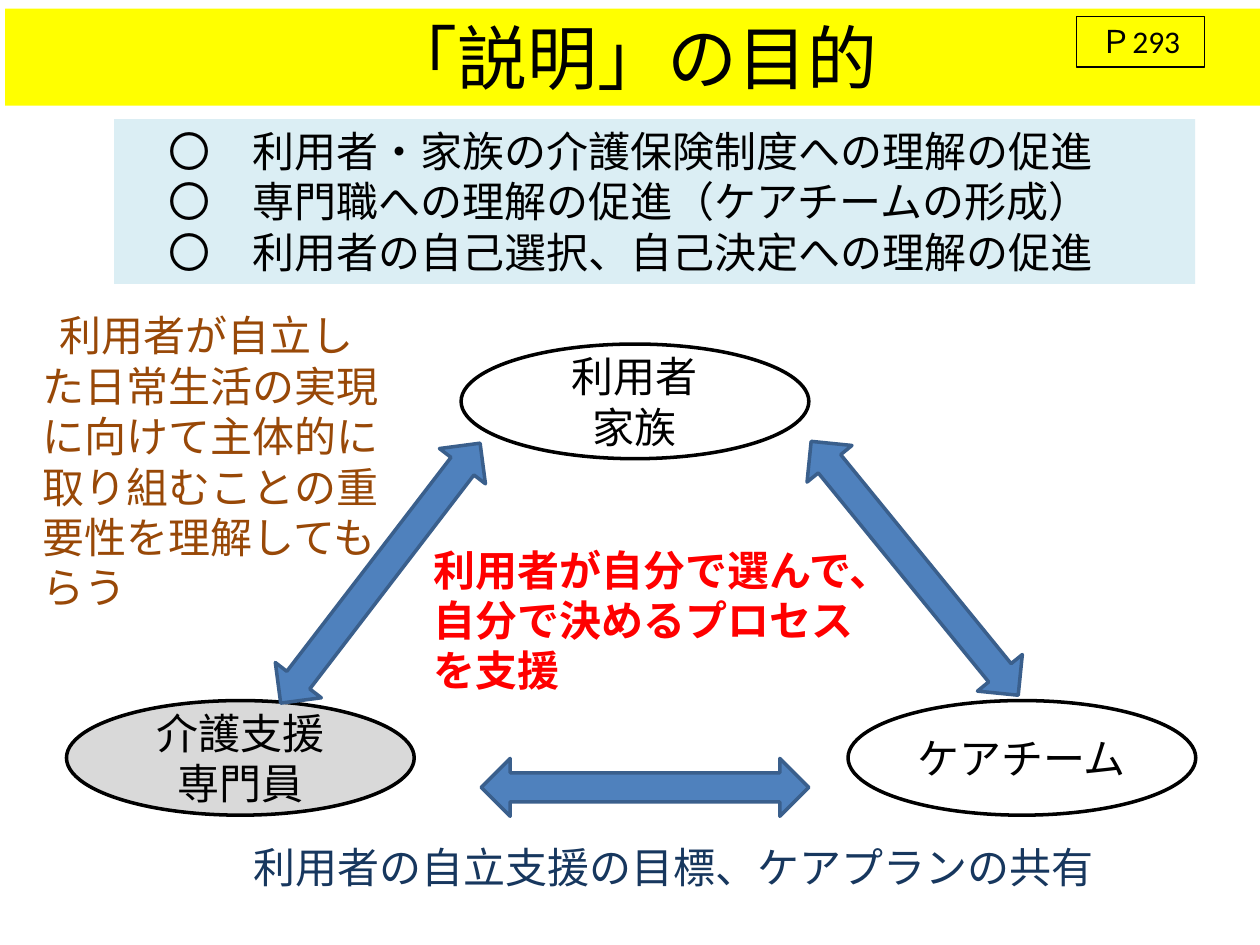
from dataclasses import dataclass

import pptx
import pptx.dml.color
import pptx.enum.shapes
import pptx.enum.text
import pptx.util

Pt = pptx.util.Pt
Shape = pptx.enum.shapes.MSO_SHAPE
Align = pptx.enum.text.PP_ALIGN
Anchor = pptx.enum.text.MSO_ANCHOR


@dataclass(frozen=True)
class Theme:
    font: str = "Calibri"
    title_size: float = 40
    body_size: float = 24
    page_size: float = 18
    black: str = "000000"
    yellow: str = "FFFF00"
    pale_blue: str = "DBEEF4"
    grey: str = "D9D9D9"
    arrow: str = "4F81BD"
    arrow_edge: str = "3A5F8C"
    brown: str = "984807"
    navy: str = "17375E"
    red: str = "FF0000"


THEME = Theme()
ELLIPSE_SIZE = (198.7, 65.5)
ARROW_SIZE = (187.2, 33.1)


def rgb(value):
    return pptx.dml.color.RGBColor.from_string(value)


def write_text(box, lines, size=THEME.body_size, color=THEME.black,
               align=Align.LEFT, anchor=Anchor.TOP, bold=False):
    frame = box.text_frame
    frame.word_wrap = True
    frame.vertical_anchor = anchor
    frame.text = "\n".join(lines)
    for para in frame.paragraphs:
        para.alignment = align
        para.font.name = THEME.font
        para.font.size = Pt(size)
        para.font.bold = bold
        para.font.color.rgb = rgb(color)


def add_figure(shapes, kind, bounds, fill=None, line=None, width=2):
    figure = shapes.add_shape(kind, *map(Pt, bounds))
    figure.shadow.inherit = False
    if fill:
        figure.fill.solid()
        figure.fill.fore_color.rgb = rgb(fill)
    else:
        figure.fill.background()
    if line:
        figure.line.color.rgb = rgb(line)
        figure.line.width = Pt(width)
    else:
        figure.line.fill.background()
    return figure


def add_actor(shapes, left, top, lines, fill=None):
    actor = add_figure(shapes, Shape.OVAL, (left, top, *ELLIPSE_SIZE), fill, THEME.black)
    write_text(actor, lines, align=Align.CENTER, anchor=Anchor.MIDDLE)


def add_double_arrow(shapes, left, top, rotation=0):
    arrow = add_figure(shapes, Shape.LEFT_RIGHT_ARROW, (left, top, *ARROW_SIZE),
                       THEME.arrow, THEME.arrow_edge)
    arrow.rotation = rotation


def add_note(shapes, bounds, text, color, bold=False):
    note = shapes.add_textbox(*map(Pt, bounds))
    write_text(note, [text], color=color, bold=bold)
    return note


def add_triangle(page):
    """Three actors at the corners, with a double arrow along each side."""
    shapes = page.shapes.add_group_shape().shapes
    add_actor(shapes, 38, 400.3, ["介護支援", "専門員"], THEME.grey)
    add_actor(shapes, 263.5, 196.6, ["利用者", "家族"])
    add_actor(shapes, 484.6, 400.3, ["ケアチーム"])
    add_double_arrow(shapes, 275, 433.4)
    add_double_arrow(shapes, 123.8, 311, 307.5)
    add_double_arrow(shapes, 429.1, 308.2, 230.8)


def add_header(page):
    title = add_figure(page.shapes, Shape.RECTANGLE, (3, 5, 717, 55.4), THEME.yellow)
    write_text(title, ["「説明」の目的"], THEME.title_size, align=Align.CENTER)
    number = add_figure(page.shapes, Shape.RECTANGLE, (615, 9.3, 73.5, 29),
                        line=THEME.black, width=0.75)
    write_text(number, ["Ｐ293"], THEME.page_size, align=Align.CENTER)


def add_purposes(page):
    panel = add_figure(page.shapes, Shape.RECTANGLE, (65.2, 68, 617.8, 94.3), THEME.pale_blue)
    purposes = ["利用者・家族の介護保険制度への理解の促進",
                "専門職への理解の促進（ケアチームの形成）",
                "利用者の自己選択、自己決定への理解の促進"]
    write_text(panel, [f"　〇　{purpose}" for purpose in purposes])


def add_notes(page):
    independence = add_note(
        page.shapes, (3, 173.5, 225.4, 181.4),
        "　利用者が自立した日常生活の実現に向けて主体的に取り組むことの重要性を理解してもらう",
        THEME.brown)
    indent = independence.text_frame.paragraphs[0]._p.get_or_add_pPr()
    indent.set("marL", str(Pt(14.2)))
    indent.set("indent", str(Pt(-14.2)))
    add_note(page.shapes, (137.5, 477.4, 578, 36.3),
             "利用者の自立支援の目標、ケアプランの共有", THEME.navy)
    add_note(page.shapes, (240.5, 307.4, 266.4, 94.3),
             "利用者が自分で選んで、自分で決めるプロセスを支援", THEME.red, bold=True)


def main():
    deck = pptx.Presentation()
    deck.slide_width, deck.slide_height = Pt(720), Pt(540)
    page = deck.slides.add_slide(deck.slide_layouts[6])
    add_purposes(page)
    add_triangle(page)
    add_notes(page)
    add_header(page)
    deck.save("out.pptx")


if __name__ == "__main__":
    main()
